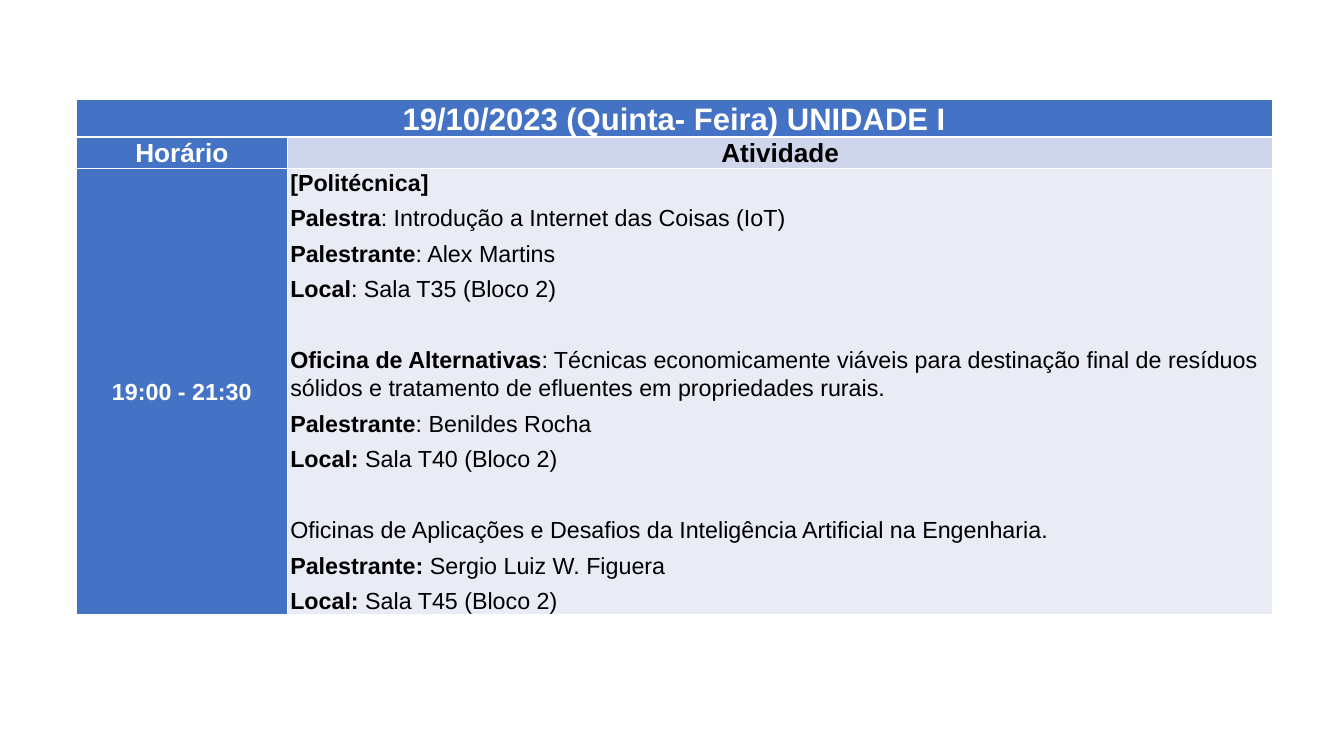
from dataclasses import dataclass

from lxml.etree import SubElement
from pptx import Presentation
from pptx.dml.color import RGBColor
from pptx.enum.text import MSO_ANCHOR, PP_ALIGN
from pptx.oxml.ns import qn
from pptx.table import _Cell
from pptx.util import Inches, Pt

COLORS = {
    "header": "4472C4",
    "subheader": "CFD5EA",
    "body": "E9EBF5",
    "light": "FFFFFF",
    "dark": "000000",
}
SESSION_GAP = 36.6
COLUMNS = (3.03, 14.12)
ROWS = (0.53, 0.44, 6.39)


@dataclass
class Line:
    label: str = ""
    detail: str = ""
    gap: float = 0


@dataclass
class CellStyle:
    fill: str
    text: str
    size: int
    align: PP_ALIGN = PP_ALIGN.CENTER
    anchor: MSO_ANCHOR = MSO_ANCHOR.TOP
    bottom_line: float = 1


ACTIVITIES = [
    Line("[Politécnica]"),
    Line("Palestra", ": Introdução a Internet das Coisas (IoT)"),
    Line("Palestrante", ": Alex Martins"),
    Line("Local", ": Sala T35 (Bloco 2)"),
    Line("Oficina de Alternativas",
         ": Técnicas economicamente viáveis para destinação final de resíduos "
         "sólidos e tratamento de efluentes em propriedades rurais.", SESSION_GAP),
    Line("Palestrante", ": Benildes Rocha"),
    Line("Local:", " Sala T40 (Bloco 2)"),
    Line("", "Oficinas de Aplicações e Desafios da Inteligência Artificial "
         "na Engenharia.", SESSION_GAP),
    Line("Palestrante:", " Sergio Luiz W. Figuera"),
    Line("Local:", " Sala T45 (Bloco 2)"),
]


def set_borders(cell: _Cell, bottom: float) -> None:
    properties = cell._tc.get_or_add_tcPr()
    for side, width in (("L", 1), ("R", 1), ("T", 1), ("B", bottom)):
        border = SubElement(properties, qn(f"a:ln{side}"), w=str(Pt(width)))
        fill = SubElement(border, qn("a:solidFill"))
        SubElement(fill, qn("a:srgbClr"), val=COLORS["light"])


def fill_cell(cell: _Cell, lines: list[Line], style: CellStyle) -> None:
    set_borders(cell, style.bottom_line)
    cell.fill.solid()
    cell.fill.fore_color.rgb = RGBColor.from_string(COLORS[style.fill])
    cell.margin_left = cell.margin_right = Inches(0.04)
    cell.margin_top = cell.margin_bottom = 0
    cell.vertical_anchor = style.anchor
    frame = cell.text_frame
    for index, line in enumerate(lines):
        para = frame.add_paragraph() if index else frame.paragraphs[0]
        para.alignment = style.align
        para.line_spacing = 1.07
        para.space_after = Pt(8)
        if line.gap:
            para.space_before = Pt(line.gap)
        para.font.name = "Arial"
        para.font.size = Pt(style.size)
        para.font.color.rgb = RGBColor.from_string(COLORS[style.text])
        for text, bold in ((line.label, True), (line.detail, False)):
            if text:
                span = para.add_run()
                span.text = text
                span.font.bold = bold


def main() -> None:
    deck = Presentation()
    deck.slide_width, deck.slide_height = Inches(19.26), Inches(10.83)
    page = deck.slides.add_slide(deck.slide_layouts[6])

    # Schedule grid
    table = page.shapes.add_table(
        len(ROWS), len(COLUMNS), Inches(1.09), Inches(1.43),
        Inches(sum(COLUMNS)), Inches(sum(ROWS))).table
    for column, width in zip(table.columns, COLUMNS):
        column.width = Inches(width)
    for row, height in zip(table.rows, ROWS):
        row.height = Inches(height)
    table.cell(0, 0).merge(table.cell(0, 1))

    # Date, column headings and the evening's activities
    contents = {
        (0, 0): ([Line("19/10/2023 (Quinta- Feira) UNIDADE I")],
                 CellStyle("header", "light", 32, bottom_line=3)),
        (1, 0): ([Line("Horário")], CellStyle("header", "light", 27)),
        (1, 1): ([Line("Atividade")], CellStyle("subheader", "dark", 27)),
        (2, 0): ([Line("19:00 - 21:30")],
                 CellStyle("header", "light", 24, anchor=MSO_ANCHOR.MIDDLE)),
        (2, 1): (ACTIVITIES, CellStyle("body", "dark", 24, PP_ALIGN.LEFT)),
    }
    for (row, column), (lines, style) in contents.items():
        fill_cell(table.cell(row, column), lines, style)

    deck.save("out.pptx")


if __name__ == "__main__":
    main()
